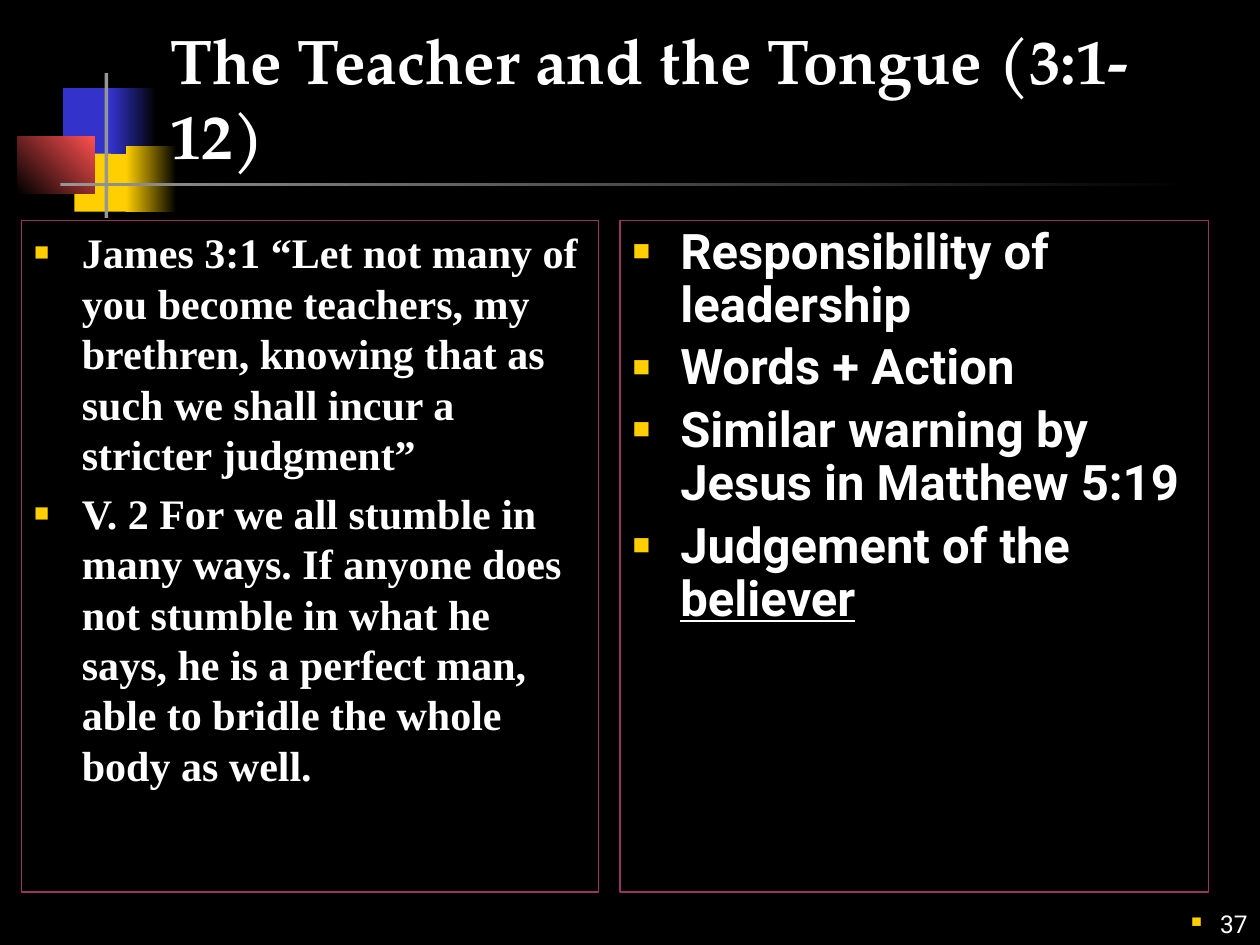
from lxml import etree
from pptx import Presentation
from pptx.dml.color import RGBColor
from pptx.enum.shapes import MSO_SHAPE
from pptx.enum.text import MSO_ANCHOR, MSO_AUTO_SIZE, PP_ALIGN
from pptx.oxml.ns import qn
from pptx.util import Inches, Pt

RECTANGLE = MSO_SHAPE.RECTANGLE
TOP, BOTTOM = MSO_ANCHOR.TOP, MSO_ANCHOR.BOTTOM
LEFT, RIGHT = PP_ALIGN.LEFT, PP_ALIGN.RIGHT
NO_FIT = MSO_AUTO_SIZE.NONE

THEME = {
    "black": "000000", "white": "FFFFFF", "yellow": "FFCF01", "blue": "3333CC",
    "red": "FF5050", "gray": "969696", "frame": "993366",
    "title": {"name": "TeX Gyre Pagella", "size": Pt(36), "bold": True},
    "scripture": {"name": "Times New Roman", "size": Pt(24), "bold": True},
    "points": {"name": "Roboto", "size": Pt(28), "bold": True},
    "number": {"name": "Roboto", "size": Pt(14), "bold": False},
}

TITLE = "The Teacher and the Tongue (3:1-12)"
TITLE_BOX = (1.25, 0.17, 8.52, 1.25)
PAGE_NUMBER = "37"
NUMBER_BOX = (8.92, 7, 1.08, 0.5)

COLUMNS = [
    {
        "box": (0.17, 1.75, 4.58, 5.33), "style": "scripture", "line_spacing": 1.0,
        "items": [
            [("James 3:1 “Let not many of you become teachers, my brethren, "
              "knowing that as such we shall incur a stricter judgment”", False)],
            [("V. 2 For we all stumble in many ways. If anyone does not stumble in "
              "what he says, he is a perfect man, able to bridle the whole body "
              "as well.", False)],
        ],
    },
    {
        "box": (4.92, 1.75, 4.67, 5.33), "style": "points", "line_spacing": 0.9,
        "items": [
            [("Responsibility of leadership", False)],
            [("Words + Action", False)],
            [("Similar warning by Jesus in Matthew 5:19", False)],
            [("Judgement of the ", False), ("believer", True)],
        ],
    },
]

ORNAMENTS = [
    ((0.59, 1.16, 0.46, 0.52), ["yellow"], 0),
    ((0.5, 0.7, 0.48, 0.52), ["blue"], 0),
    ((0.88, 0.7, 0.36, 0.52), ["blue", "black"], 0),
    ((1, 1.16, 0.4, 0.52), ["yellow", "black"], 0),
    ((0.14, 1.08, 0.61, 0.46), ["black", "red"], 45),
    ((0.83, 0.58, 0.03, 1.15), ["gray"], 0),
    ((0.48, 1.45, 9, 0.03), ["gray", "black"], 0),
]


def color(name):
    return RGBColor.from_string(THEME[name])


def apply(target, values):
    for name, value in values.items():
        setattr(target, name, value)


def place(shape, box):
    apply(shape, dict(zip(("left", "top", "width", "height"), map(Inches, box))))


def add_run(paragraph, text, style, underline=False):
    run = paragraph.add_run()
    run.text = text
    apply(run.font, {**THEME[style], "underline": underline})
    run.font.color.rgb = color("white")


def add_bullet(paragraph, indent):
    properties = paragraph._p.get_or_add_pPr()
    properties.set("marL", str(Inches(indent)))
    properties.set("indent", str(-Inches(indent)))
    bullet_color = etree.SubElement(properties, qn("a:buClr"))
    etree.SubElement(bullet_color, qn("a:srgbClr"), val=THEME["yellow"])
    etree.SubElement(properties, qn("a:buSzPct"), val="60000")
    etree.SubElement(properties, qn("a:buChar"), char="■")


def add_ornaments(slide):
    group = slide.shapes.add_group_shape()
    for box, colors, angle in ORNAMENTS:
        shape = group.shapes.add_shape(RECTANGLE, *map(Inches, box))
        shape.shadow.inherit = False
        shape.line.fill.background()
        if len(colors) == 1:
            shape.fill.solid()
            shape.fill.fore_color.rgb = color(colors[0])
        else:
            shape.fill.gradient()
            shape.fill.gradient_angle = angle
            for stop, name in zip(shape.fill.gradient_stops, colors):
                stop.color.rgb = color(name)
    slide.shapes._spTree.insert(2, group._element)


def fill_title(shape):
    place(shape, TITLE_BOX)
    apply(shape.text_frame, {"vertical_anchor": BOTTOM, "word_wrap": True,
                             "auto_size": NO_FIT})
    paragraph = shape.text_frame.paragraphs[0]
    paragraph.alignment = LEFT
    add_run(paragraph, TITLE, "title")


def fill_column(shape, column):
    place(shape, column["box"])
    shape.line.color.rgb = color("frame")
    shape.line.width = Pt(0.75)
    frame = shape.text_frame
    apply(frame, {"vertical_anchor": TOP, "word_wrap": True, "auto_size": NO_FIT})
    style = column["style"]
    for index, runs in enumerate(column["items"]):
        paragraph = frame.add_paragraph() if index else frame.paragraphs[0]
        apply(paragraph, {"alignment": LEFT, "line_spacing": column["line_spacing"],
                          "space_before": Pt(0.2 * THEME[style]["size"].pt)})
        add_bullet(paragraph, 0.38)
        for text, underline in runs:
            add_run(paragraph, text, style, underline)


def add_page_number(slide):
    frame = slide.shapes.add_textbox(*map(Inches, NUMBER_BOX)).text_frame
    apply(frame, {"vertical_anchor": BOTTOM, "word_wrap": True})
    paragraph = frame.paragraphs[0]
    paragraph.alignment = RIGHT
    add_bullet(paragraph, 0.23)
    add_run(paragraph, PAGE_NUMBER, "number")


def main():
    presentation = Presentation()
    presentation.slide_width, presentation.slide_height = Inches(10), Inches(7.5)
    slide = presentation.slides.add_slide(presentation.slide_layouts[3])
    slide.background.fill.solid()
    slide.background.fill.fore_color.rgb = color("black")
    title, *bodies = slide.placeholders
    fill_title(title)
    for body, column in zip(bodies, COLUMNS):
        fill_column(body, column)
    add_ornaments(slide)
    add_page_number(slide)
    presentation.save("out.pptx")


if __name__ == "__main__":
    main()
